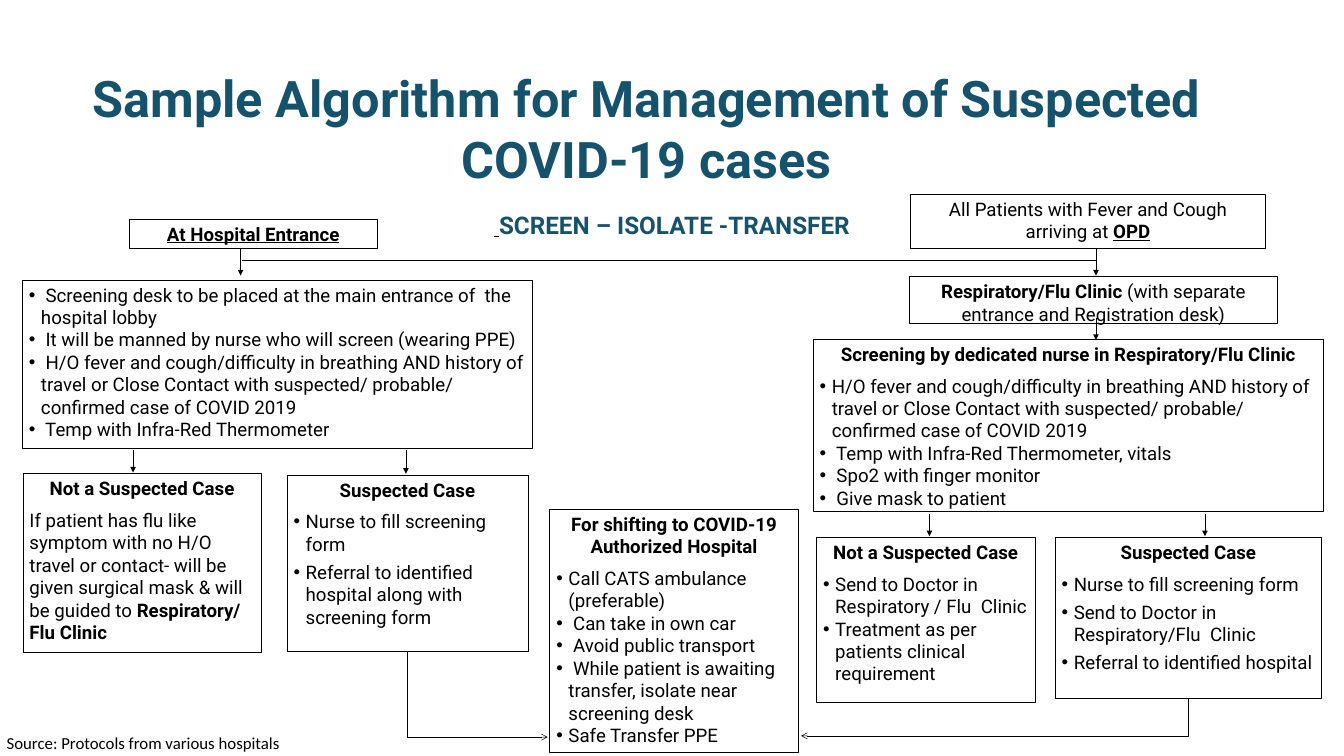
"""Build the slide with the algorithm for managing suspected COVID-19 cases."""

from dataclasses import dataclass
from typing import Optional

import lxml.etree
import pptx
import pptx.dml.color
import pptx.enum.shapes
import pptx.enum.text
import pptx.oxml.ns
import pptx.util

Pt = pptx.util.Pt
qn = pptx.oxml.ns.qn
CENTER = pptx.enum.text.PP_ALIGN.CENTER
LEFT = pptx.enum.text.PP_ALIGN.LEFT


@dataclass(frozen=True)
class Theme:
    ink: str = "000000"
    paper: str = "FFFFFF"
    accent: str = "15526C"
    font: str = "Roboto"
    source_font: str = "Calibri"
    title_size: float = 54
    slogan_size: float = 26
    body_size: float = 20
    source_size: float = 18
    box_line: float = 0.75
    thin_line: float = 0.5
    indent: float = 13
    heading_gap: float = 10
    item_gap: float = 6


THEME = Theme()


@dataclass(frozen=True)
class Run:
    text: str
    bold: bool = False
    underline: bool = False
    size: float = THEME.body_size
    color: str = THEME.ink
    font: str = THEME.font


@dataclass(frozen=True)
class Paragraph:
    runs: tuple[Run, ...]
    align: int = LEFT
    after: float = 0
    bullet: bool = False


@dataclass(frozen=True)
class Block:
    left: float
    top: float
    width: float
    height: float
    paragraphs: tuple[Paragraph, ...]


@dataclass(frozen=True)
class Link:
    x1: float
    y1: float
    x2: float
    y2: float
    head: Optional[str] = "triangle"
    weight: float = THEME.box_line
    bent: bool = False


def centered(*runs: Run) -> Paragraph:
    return Paragraph(runs, CENTER, THEME.heading_gap)


def heading(text: str) -> Paragraph:
    return centered(Run(text, bold=True))


def bullets(*texts: str, after: float = 0) -> tuple[Paragraph, ...]:
    return tuple(Paragraph((Run(text),), after=after, bullet=True) for text in texts)


def color(value: str) -> pptx.dml.color.RGBColor:
    return pptx.dml.color.RGBColor.from_string(value)


HISTORY = ("H/O fever and cough/difficulty in breathing AND history of travel or Close Contact "
           "with suspected/ probable/ confirmed case of COVID 2019")

BOXES = (
    Block(138.2, 234.7, 266.4, 31.7, (
        centered(Run("At Hospital Entrance", bold=True, underline=True)),)),
    Block(975.6, 208.1, 380.2, 58.3, (
        centered(Run("All Patients with Fever and Cough arriving at "),
                 Run("OPD", bold=True, underline=True)),)),
    Block(23.8, 300.2, 546.5, 180, bullets(
        " Screening desk to be placed at the main entrance of  the hospital lobby",
        " It will be manned by nurse who will screen (wearing PPE)",
        " " + HISTORY,
        " Temp with Infra-Red Thermometer")),
    Block(974.2, 296.6, 394.6, 50.4, (
        centered(Run("Respiratory/Flu Clinic ", bold=True),
                 Run("(with separate entrance and Registration desk)")),)),
    Block(871.2, 363.6, 547.2, 184.3, (
        heading("Screening by dedicated nurse in Respiratory/Flu Clinic"),
        *bullets(HISTORY, " Temp with Infra-Red Thermometer, vitals",
                 " Spo2 with finger monitor", " Give mask to patient"))),
    Block(24.5, 507.6, 255.6, 191.5, (
        heading("Not a Suspected Case"),
        Paragraph((Run("If patient has flu like symptom with no H/O travel or contact- will be "
                       "given surgical mask & will be guided to "),
                   Run("Respiratory/ Flu Clinic", bold=True)), after=THEME.heading_gap))),
    Block(307.4, 509, 258.5, 189.4, (
        heading("Suspected Case"),
        *bullets("Nurse to fill screening form",
                 "Referral to identified hospital along with screening form",
                 after=THEME.item_gap))),
    Block(874.8, 576, 234, 176.4, (
        heading("Not a Suspected Case"),
        *bullets("Send to Doctor in Respiratory / Flu  Clinic",
                 "Treatment as per  patients clinical requirement"))),
    Block(1130.4, 576, 285.8, 172.8, (
        heading("Suspected Case"),
        *bullets("Nurse to fill screening form", "Send to Doctor in Respiratory/Flu  Clinic",
                 "Referral to identified hospital", after=THEME.item_gap))),
    Block(589, 545.8, 266.4, 260.6, (
        heading("For shifting to COVID-19 Authorized Hospital"),
        *bullets("Call CATS ambulance (preferable)", " Can take in own car",
                 " Avoid public transport",
                 " While patient is awaiting transfer, isolate near screening desk",
                 "Safe Transfer PPE"))),
)

TITLE = Block(72, 49, 1242, 156.2, (Paragraph((
    Run("Sample Algorithm for Management of Suspected COVID-19 cases", bold=True,
        size=THEME.title_size, color=THEME.accent),), CENTER),))
SLOGAN = Block(511.2, 221.8, 418.3, 38.9, (Paragraph((
    Run(" ", bold=True, underline=True),
    Run("SCREEN – ISOLATE -TRANSFER", bold=True, size=THEME.slogan_size,
        color=THEME.accent)), CENTER),))
SOURCE = Block(0, 781.2, 370.8, 28.8, (Paragraph((
    Run("Source: Protocols from various hospitals", size=THEME.source_size,
        font=THEME.source_font),)),))

LINKS = (
    *(Link(x, top, x, bottom) for x, top, bottom in (
        (257.8, 266.4, 295.2), (1174.3, 266.4, 295.2), (1174.3, 340.6, 364.3),
        (142.6, 482.4, 506.2), (434.9, 482.4, 507.6),
        (995.8, 550.8, 574.6), (1291, 550.8, 574.6))),
    Link(259.2, 278.6, 1175, 278.6, None, THEME.thin_line),
    Link(436.3, 698.4, 586.8, 789.8, "arrow", THEME.thin_line, bent=True),
    Link(1273, 748.8, 858.2, 788.4, "arrow", THEME.thin_line, bent=True),
)


def write(frame: pptx.text.text.TextFrame, paragraphs: tuple[Paragraph, ...],
          anchor: int = pptx.enum.text.MSO_ANCHOR.TOP) -> None:
    frame.word_wrap = True
    frame.vertical_anchor = anchor
    for index, item in enumerate(paragraphs):
        paragraph = frame.add_paragraph() if index else frame.paragraphs[0]
        paragraph.alignment = item.align
        paragraph.space_after = Pt(item.after)
        if item.bullet:
            properties = paragraph._p.get_or_add_pPr()
            properties.set("marL", str(Pt(THEME.indent)))
            properties.set("indent", str(-Pt(THEME.indent)))
            lxml.etree.SubElement(properties, qn("a:buFont")).set("typeface", "Arial")
            lxml.etree.SubElement(properties, qn("a:buChar")).set("char", "•")
        for part in item.runs:
            run = paragraph.add_run()
            run.text = part.text
            run.font.name, run.font.size = part.font, Pt(part.size)
            run.font.bold, run.font.underline = part.bold, part.underline
            run.font.color.rgb = color(part.color)


def draw_box(slide: pptx.slide.Slide, block: Block) -> None:
    shape = slide.shapes.add_shape(pptx.enum.shapes.MSO_SHAPE.RECTANGLE, Pt(block.left),
                                   Pt(block.top), Pt(block.width), Pt(block.height))
    shape.shadow.inherit = False
    shape.fill.solid()
    shape.fill.fore_color.rgb = color(THEME.paper)
    shape.line.color.rgb = color(THEME.ink)
    shape.line.width = Pt(THEME.box_line)
    write(shape.text_frame, block.paragraphs)


def draw_text(slide: pptx.slide.Slide, block: Block,
              anchor: int = pptx.enum.text.MSO_ANCHOR.TOP) -> None:
    shape = slide.shapes.add_textbox(Pt(block.left), Pt(block.top), Pt(block.width),
                                     Pt(block.height))
    write(shape.text_frame, block.paragraphs, anchor)


def draw_link(slide: pptx.slide.Slide, link: Link) -> None:
    kinds = pptx.enum.shapes.MSO_CONNECTOR
    x1, y1, x2, y2 = link.x1, link.y1, link.x2, link.y2
    if link.bent:
        middle_x, middle_y = (x1 + x2) / 2, (y1 + y2) / 2
        half_width, half_height = abs(y2 - y1) / 2, abs(x2 - x1) / 2
        x1, x2 = middle_x - half_width, middle_x + half_width
        y1, y2 = middle_y - half_height, middle_y + half_height
    connector = slide.shapes.add_connector(kinds.ELBOW if link.bent else kinds.STRAIGHT,
                                           Pt(x1), Pt(y1), Pt(x2), Pt(y2))
    connector.line.color.rgb = color(THEME.ink)
    connector.line.width = Pt(link.weight)
    properties = connector._element.spPr
    if link.bent:
        rightward = link.x2 > link.x1
        transform = properties.find(qn("a:xfrm"))
        transform.set("rot", str((270 if rightward else 90) * 60000))
        transform.set("flipH", str(int(rightward)))
        properties.find(qn("a:prstGeom")).set("prst", "bentConnector2")
    if link.head:
        lxml.etree.SubElement(properties.find(qn("a:ln")), qn("a:tailEnd")).set("type", link.head)
    lxml.etree.SubElement(properties, qn("a:effectLst"))


def main() -> None:
    presentation = pptx.Presentation()
    presentation.slide_width, presentation.slide_height = Pt(1440), Pt(810)
    slide = presentation.slides.add_slide(presentation.slide_layouts[6])
    draw_text(slide, TITLE, pptx.enum.text.MSO_ANCHOR.BOTTOM)
    for block in BOXES:
        draw_box(slide, block)
    for block in (SLOGAN, SOURCE):
        draw_text(slide, block)
    for link in LINKS:
        draw_link(slide, link)
    presentation.save("out.pptx")


if __name__ == "__main__":
    main()
